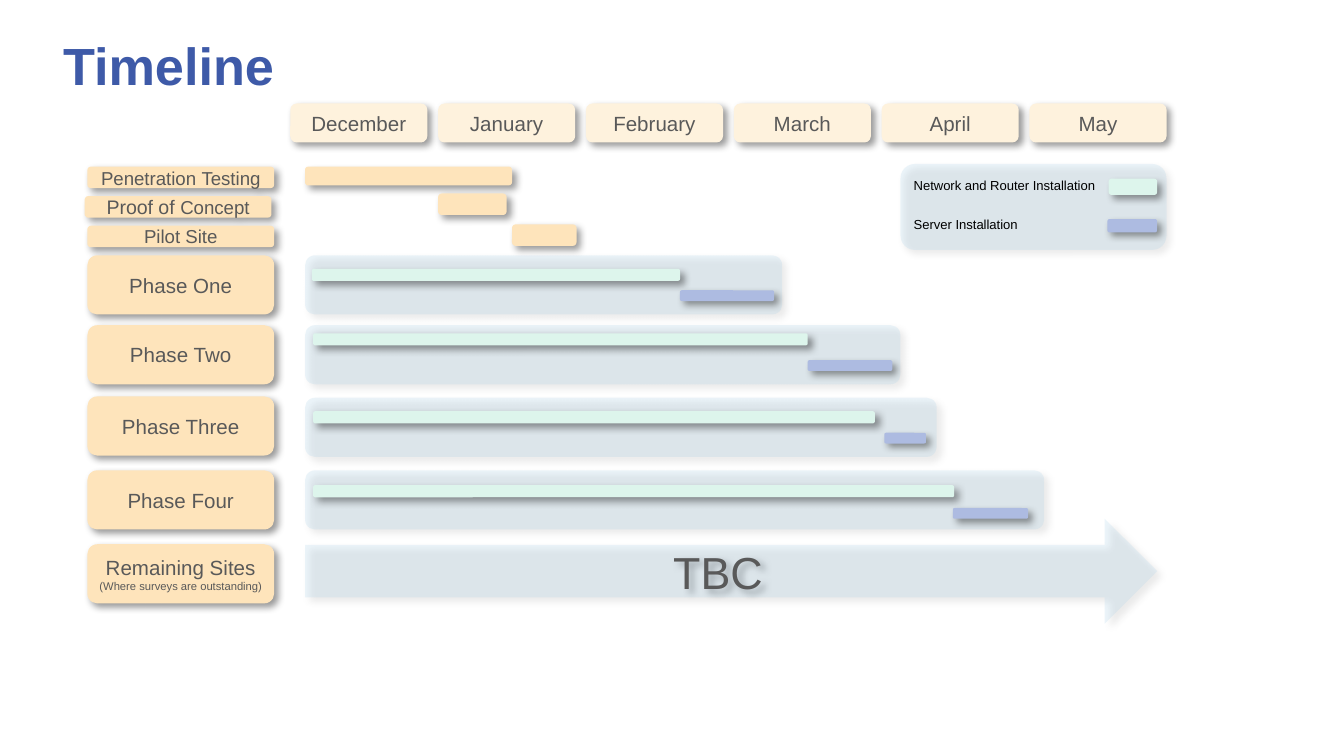
from lxml import etree
from pptx import Presentation
from pptx.dml.color import RGBColor
from pptx.enum.shapes import MSO_SHAPE as Kind
from pptx.enum.text import MSO_ANCHOR as Anchor, MSO_AUTO_SIZE as Fit, PP_ALIGN as Align
from pptx.oxml import parse_xml
from pptx.oxml.ns import nsdecls, qn
from pptx.util import Inches, Pt

CREAM = RGBColor(0xFE, 0xF2, 0xDD)
SAND = RGBColor(0xFE, 0xE4, 0xBB)
SKY = RGBColor(0xA2, 0xCE, 0xE8)
MINT = RGBColor(0xDD, 0xF5, 0xEC)
LILAC = RGBColor(0xAD, 0xBB, 0xE1)
GREY = RGBColor(0x59, 0x59, 0x59)
BLACK = RGBColor(0, 0, 0)
BLUE = RGBColor(0x3E, 0x5A, 0xA8)

SHADOW = (
    f'<a:effectLst {nsdecls("a")}><a:outerShdw blurRad="50800" dist="38100" '
    'dir="2700000" algn="tl" rotWithShape="0"><a:srgbClr val="000000">'
    '<a:alpha val="40000"/></a:srgbClr></a:outerShdw></a:effectLst>'
)

deck = Presentation()
deck.slide_width = Inches(10)
deck.slide_height = Inches(10 * 9 / 16)
slide = deck.slides.add_slide(deck.slide_layouts[5])


def block(x, y, w, h, fill, kind=Kind.ROUNDED_RECTANGLE):
    """Add a borderless shape with a soft shadow; sky shapes are see-through."""
    shape = slide.shapes.add_shape(kind, Inches(x), Inches(y), Inches(w), Inches(h))
    shape.fill.solid()
    shape.fill.fore_color.rgb = fill
    shape.line.fill.background()
    props = shape._element.spPr
    if fill == SKY:
        tint = props.find(qn("a:solidFill"))[0]
        etree.SubElement(tint, qn("a:alpha"), val="20000")
    props.append(parse_xml(SHADOW))
    return shape


def write(shape, lines, color=GREY, align=Align.CENTER, anchor=Anchor.MIDDLE,
          wrap=False, bold=False):
    """Fill a shape with lines, each a list of (text, size) runs."""
    frame = shape.text_frame
    frame.word_wrap, frame.vertical_anchor = wrap, anchor
    for i, runs in enumerate(lines):
        para = frame.add_paragraph() if i else frame.paragraphs[0]
        para.alignment = align
        for text, size in runs:
            run = para.add_run()
            run.text = text
            run.font.color.rgb = color
            style = {"name": "Arial", "size": Pt(size), "bold": bold}
            for key, value in style.items():
                setattr(run.font, key, value)


# Title
title = slide.shapes.title
place = {"left": 0.37, "top": 0.2, "width": 1.79, "height": 0.57}
for key, value in place.items():
    setattr(title, key, Inches(value))
title.text_frame.auto_size = Fit.NONE
write(title, [[("Timeline", 28)]], BLUE, Align.LEFT, Anchor.TOP, bold=True)

# Month headings
months = ["December", "January", "February", "March", "April", "May"]
for i, month in enumerate(months):
    head = block(2.16 + 1.1 * i, 0.77, 1.02, 0.29, CREAM)
    write(head, [[(month, 11)]], wrap=True)

# Early tasks: label left, top, runs, then bar left, top, width, height
tasks = [
    (0.65, 1.24, [("Penetration", 10), (" ", 10.5), ("Testing", 10)],
     (2.27, 1.24, 1.54, 0.14)),
    (0.63, 1.46, [("Proof of ", 10.5), ("Concept", 10)], (3.26, 1.44, 0.51, 0.16)),
    (0.65, 1.68, [("Pilot Site", 10)], (3.81, 1.67, 0.48, 0.16)),
]
for x, y, runs, bar in tasks:
    write(block(x, y, 1.39, 0.16, SAND), [runs])
    block(*bar, SAND)

# Phases: name, label top, panel top and width,
# then left, top and width of the network bar and of the server bar
phases = [
    ("Phase One", 1.9, 1.9, 3.55, (2.32, 2.0, 2.74), (5.06, 2.16, 0.7)),
    ("Phase Two", 2.42, 2.42, 4.43, (2.33, 2.48, 3.68), (6.01, 2.68, 0.63)),
    ("Phase Three", 2.95, 2.96, 4.7, (2.33, 3.06, 4.18), (6.58, 3.22, 0.31)),
    ("Phase Four", 3.5, 3.5, 5.5, (2.33, 3.61, 4.77), (7.09, 3.78, 0.56)),
]
for name, y, top, width, network, server in phases:
    write(block(0.65, y, 1.39, 0.44, SAND), [[(name, 11)]])
    block(2.27, top, width, 0.44, SKY)
    block(*network, 0.09, MINT)
    block(*server, 0.08, LILAC)

# Remaining sites
rest = block(0.65, 4.05, 1.39, 0.44, SAND)
write(rest, [[("Remaining Sites", 11)], [("(Where surveys are outstanding)", 6)]])
arrow = block(2.27, 3.86, 6.34, 0.78, SKY, Kind.RIGHT_ARROW)
write(arrow, [[("TBC", 24)]])

# Legend
block(6.7, 1.22, 1.98, 0.64, SKY)
keys = [
    ("Network and Router Installation", 1.27, 1.68, (8.25, 1.33, 0.36, 0.12), MINT),
    ("Server Installation", 1.56, 1.51, (8.24, 1.63, 0.37, 0.1), LILAC),
]
for text, y, width, swatch, color in keys:
    block(*swatch, color)
    note = slide.shapes.add_textbox(Inches(6.7), Inches(y), Inches(width), Inches(0.22))
    write(note, [[(text, 7)]], BLACK, Align.LEFT, Anchor.TOP, wrap=True)

deck.save("out.pptx")
